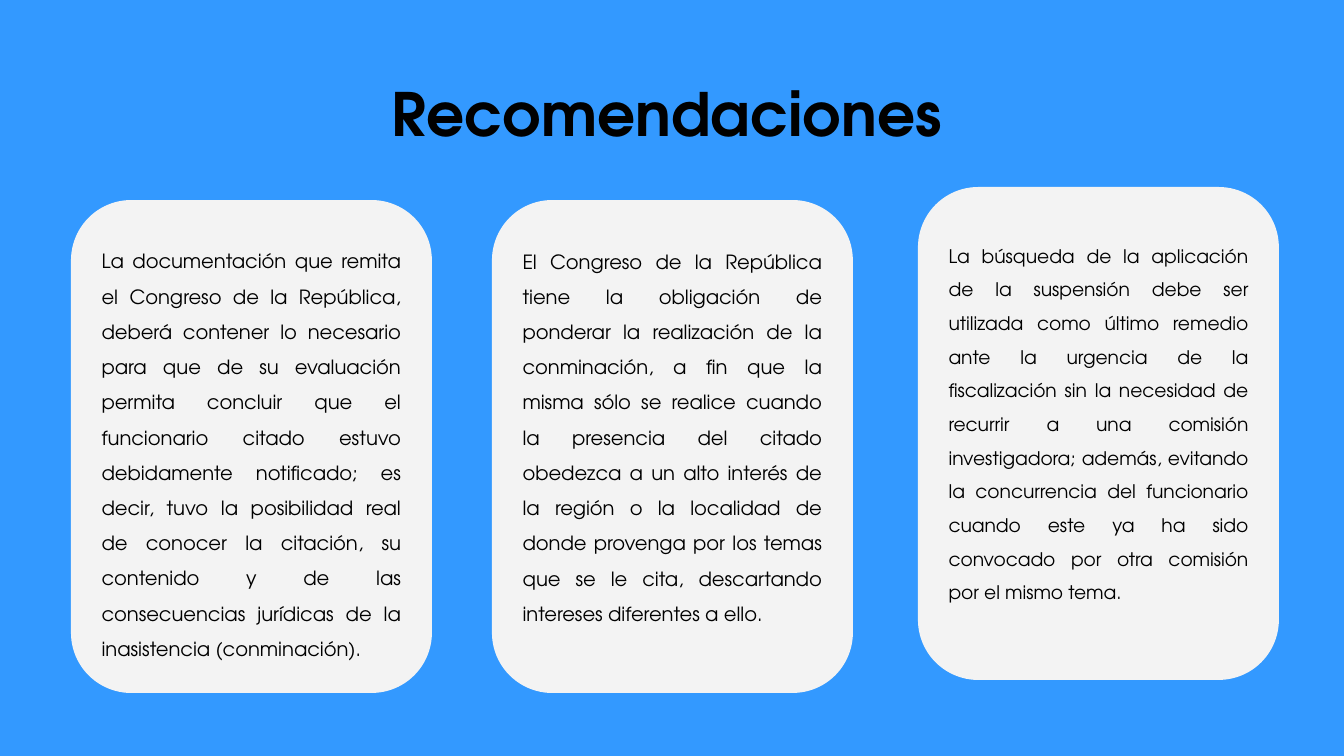
"""Build the recommendations slide: a title above three rounded text cards."""
from typing import NamedTuple

from pptx import Presentation
from pptx.dml.color import RGBColor
from pptx.enum.shapes import MSO_SHAPE as Shp
from pptx.enum.text import MSO_ANCHOR as Anchor, MSO_AUTO_SIZE as Fit, PP_ALIGN as Align
from pptx.util import Emu, Pt

BLUE = RGBColor(0x33, 0x99, 0xFF)
PALE = RGBColor(0xF3, 0xF3, 0xF3)
BLACK = RGBColor(0, 0, 0)
FONT = "TeX Gyre Adventor"
SLIDE_W, SLIDE_H = 1344, 756
CARD_W, CARD_H = 361, 493
INSET = 13


class Card(NamedTuple):
    """Position, text size, extra insets and wording of one card."""
    x: int
    y: int
    size: float
    extra_top: int
    extra_bottom: int
    text: str


CARDS = [
    Card(71, 200, 10.5, 5, 0,
         "La documentación que remita el Congreso de la República, deberá contener lo "
         "necesario para que de su evaluación permita concluir que el funcionario citado "
         "estuvo debidamente notificado; es decir, tuvo la posibilidad real de conocer la "
         "citación, su contenido y de las consecuencias jurídicas de la inasistencia "
         "(conminación)."),
    Card(492, 200, 10.5, 0, 30,
         "El Congreso de la República tiene la obligación de ponderar la realización de la "
         "conminación, a fin que la misma sólo se realice cuando la presencia del citado "
         "obedezca a un alto interés de la región o la localidad de donde provenga por los "
         "temas que se le cita, descartando intereses diferentes a ello."),
    Card(918, 187, 10, 0, 30,
         "La búsqueda de la aplicación de la suspensión debe ser utilizada como último "
         "remedio ante la urgencia de la fiscalización sin la necesidad de recurrir a una "
         "comisión investigadora; además, evitando la concurrencia del funcionario cuando "
         "este ya ha sido convocado por otra comisión por el mismo tema."),
]


def px(n: int) -> Emu:
    """Turn slide pixels into EMU."""
    return Emu(round(n * 9144000 / SLIDE_W))


def set_all(obj, values: dict) -> None:
    """Set each named attribute on the object."""
    for name, value in values.items():
        setattr(obj, name, value)


def write(sp, text: str, size: float, align, spacing: float, bold: bool = False,
          top: int = INSET, bottom: int = INSET) -> None:
    """Put one formatted paragraph into the shape."""
    tf = sp.text_frame
    set_all(tf, {"word_wrap": True, "auto_size": Fit.NONE,
                 "vertical_anchor": Anchor.MIDDLE,
                 "margin_left": px(INSET), "margin_right": px(INSET),
                 "margin_top": px(top), "margin_bottom": px(bottom)})
    p = tf.paragraphs[0]
    set_all(p, {"alignment": align, "line_spacing": spacing})
    r = p.add_run()
    r.text = text
    set_all(r.font, {"name": FONT, "size": Pt(size), "bold": bold})
    r.font.color.rgb = BLACK


def add_card(s, card: Card) -> None:
    """Draw one rounded card with its justified text."""
    sp = s.shapes.add_shape(Shp.ROUNDED_RECTANGLE, px(card.x), px(card.y),
                            px(CARD_W), px(CARD_H))
    sp.adjustments[0] = 0.167
    sp.shadow.inherit = False
    sp.fill.solid()
    sp.fill.fore_color.rgb = PALE
    sp.line.fill.background()
    write(sp, card.text, card.size, Align.JUSTIFY, 1.5,
          top=INSET + card.extra_top, bottom=INSET + card.extra_bottom)


def main() -> None:
    """Assemble and save the slide."""
    prs = Presentation()
    set_all(prs, {"slide_width": px(SLIDE_W), "slide_height": px(SLIDE_H)})
    s = prs.slides.add_slide(prs.slide_layouts[5])
    s.background.fill.solid()
    s.background.fill.fore_color.rgb = BLUE
    title = s.shapes.title
    set_all(title, {"left": px(54), "top": px(51), "width": px(1226), "height": px(124)})
    write(title, "Recomendaciones", 32, Align.CENTER, 1.0, bold=True)
    for card in CARDS:
        add_card(s, card)
    prs.save("out.pptx")


if __name__ == "__main__":
    main()
